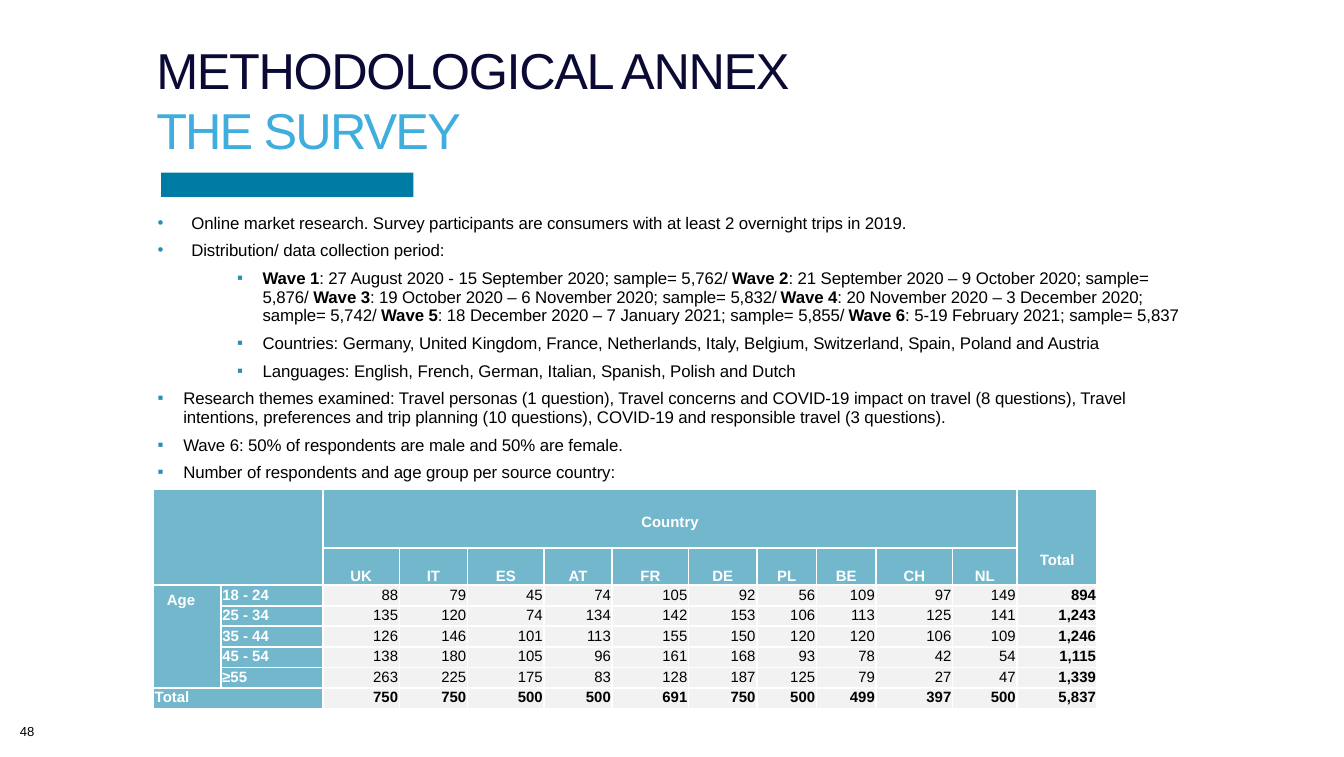
"""Builds the methodological annex slide describing the survey."""
import dataclasses

import lxml.etree
import pptx
import pptx.dml.color
import pptx.enum.shapes
import pptx.enum.text
import pptx.oxml.ns
import pptx.util

Pt = pptx.util.Pt
qn = pptx.oxml.ns.qn
Align = pptx.enum.text.PP_ALIGN
Anchor = pptx.enum.text.MSO_ANCHOR


@dataclasses.dataclass(frozen=True)
class Theme:
    font: str = "Arial"
    navy: str = "0A0A35"
    sky: str = "3FADDD"
    bar: str = "007BA3"
    bullet: str = "2D8CB5"
    header: str = "73B7CC"
    body: str = "F2F2F2"
    black: str = "000000"
    white: str = "FFFFFF"
    title_size: float = 27
    text_size: float = 9
    table_size: float = 8
    number_size: float = 7


theme = Theme()


def rgb(value):
    return pptx.dml.color.RGBColor.from_string(value)


def add_run(paragraph, text, size, color, bold=False, spacing=0):
    run = paragraph.add_run()
    run.text = text
    run.font.name = theme.font
    run.font.size = Pt(size)
    run.font.bold = bold
    run.font.color.rgb = rgb(color)
    if spacing:
        run.font._element.set("spc", str(spacing))


deck = pptx.Presentation()
deck.slide_width, deck.slide_height = Pt(720), Pt(405.5)
slide = deck.slides.add_slide(deck.slide_layouts[5])

title = slide.shapes.title
title.left, title.top, title.width, title.height = Pt(82.8), Pt(20.4), Pt(427.7), Pt(65.5)
heading = title.text_frame
heading.auto_size = pptx.enum.text.MSO_AUTO_SIZE.NONE
heading.vertical_anchor = Anchor.MIDDLE
heading.margin_left = heading.margin_right = heading.margin_bottom = 0
heading.margin_top = Pt(0.7)
title_lines = [("METHODOLOGICAL ANNEX", theme.navy, -75), ("THE SURVEY", theme.sky, -100)]
for index, (text, color, spacing) in enumerate(title_lines):
    line = heading.add_paragraph() if index else heading.paragraphs[0]
    line.alignment = Align.LEFT
    line.line_spacing = Pt(31.8)
    line.space_before = Pt(0)
    line._p.get_or_add_pPr().set("marL", str(Pt(0.9)))
    add_run(line, text, theme.title_size, color, spacing=spacing)

accent_bar = slide.shapes.add_shape(
    pptx.enum.shapes.MSO_SHAPE.RECTANGLE, Pt(86.3), Pt(92.5), Pt(135.2), Pt(13))
accent_bar.shadow.inherit = False
accent_bar.fill.solid()
accent_bar.fill.fore_color.rgb = rgb(theme.bar)
accent_bar.line.fill.background()

column_widths = [36.2, 54.6, 41, 36.5, 41, 36.5, 41, 36.5, 32, 32, 41, 34.5, 43]
row_heights = [31.2, 20] + [11] * 6
respondents = [
    ["", "", "Country"] + [""] * 9 + ["Total"],
    ["", "", "UK", "IT", "ES", "AT", "FR", "DE", "PL", "BE", "CH", "NL", ""],
    ["Age", "18 - 24", 88, 79, 45, 74, 105, 92, 56, 109, 97, 149, 894],
    ["", "25 - 34", 135, 120, 74, 134, 142, 153, 106, 113, 125, 141, 1243],
    ["", "35 - 44", 126, 146, 101, 113, 155, 150, 120, 120, 106, 109, 1246],
    ["", "45 - 54", 138, 180, 105, 96, 161, 168, 93, 78, 42, 54, 1115],
    ["", "≥55", 263, 225, 175, 83, 128, 187, 125, 79, 27, 47, 1339],
    ["Total", "", 750, 750, 500, 500, 691, 750, 500, 499, 397, 500, 5837],
]
last_row, last_column = len(row_heights) - 1, len(column_widths) - 1
table = slide.shapes.add_table(
    len(row_heights), len(column_widths),
    Pt(82.2), Pt(262.3), Pt(sum(column_widths)), Pt(sum(row_heights))).table
for column, width in zip(table.columns, column_widths):
    column.width = Pt(width)
for row, height in zip(table.rows, row_heights):
    row.height = Pt(height)

for r, entries in enumerate(respondents):
    for c, entry in enumerate(entries):
        cell = table.cell(r, c)
        is_head, is_label = r < 2, c < 2
        cell.margin_left = cell.margin_right = cell.margin_top = Pt(0.7)
        cell.margin_bottom = 0
        cell.vertical_anchor = Anchor.BOTTOM if is_head else Anchor.TOP
        if entry in ("Country", "Total") and is_head:
            cell.margin_bottom = Pt(9)
        if entry == "Age":
            cell.margin_left, cell.margin_top = Pt(7.2), Pt(3.6)
        cell.fill.solid()
        cell.fill.fore_color.rgb = rgb(theme.header if is_head or is_label else theme.body)
        for position, side in enumerate(("a:lnL", "a:lnR", "a:lnT", "a:lnB")):
            border = lxml.etree.Element(qn(side), w=str(Pt(1)))
            paint = lxml.etree.SubElement(border, qn("a:solidFill"))
            lxml.etree.SubElement(paint, qn("a:srgbClr"), val=theme.white)
            cell._tc.tcPr.insert(position, border)
        paragraph = cell.text_frame.paragraphs[0]
        if entry == "":
            paragraph._p.get_or_add_endParaRPr().set("sz", str(theme.table_size * 100))
            continue
        paragraph.alignment = Align.CENTER if is_head else Align.LEFT if is_label else Align.RIGHT
        add_run(paragraph, entry if isinstance(entry, str) else f"{entry:,}", theme.table_size,
                theme.white if is_head or is_label else theme.black,
                bold=is_head or is_label or r == last_row or c == last_column)

merges = [(0, 0, 1, 1), (0, 2, 0, last_column - 1), (0, last_column, 1, last_column),
          (2, 0, last_row - 1, 0), (last_row, 0, last_row, 1)]
for top, left, bottom, right in merges:
    table.cell(top, left).merge(table.cell(bottom, right))

page_number = slide.shapes.add_textbox(Pt(6.2), Pt(376.6), Pt(16.6), Pt(16.6)).text_frame
survey_notes = slide.shapes.add_textbox(Pt(83.8), Pt(112.3), Pt(553), Pt(141.8)).text_frame
for frame in (page_number, survey_notes):
    frame.word_wrap = True
    frame.margin_left = frame.margin_right = frame.margin_bottom = 0
    frame.margin_top = Pt(2.2)

page_line = page_number.paragraphs[0]
page_line.alignment = Align.CENTER
page_line.line_spacing = Pt(17)
add_run(page_line, "48", theme.number_size, theme.black)

waves = [
    ("Wave 1", ": 27 August 2020 - 15 September 2020; sample= 5,762/ "),
    ("Wave 2", ": 21 September 2020 – 9 October 2020; sample= 5,876/ "),
    ("Wave 3", ": 19 October 2020 – 6 November 2020; sample= 5,832/ "),
    ("Wave 4", ": 20 November 2020 – 3 December 2020; sample= 5,742/ "),
    ("Wave 5", ": 18 December 2020 – 7 January 2021; sample= 5,855/ "),
    ("Wave 6", ": 5-19 February 2021; sample= 5,837"),
]
main_point = (0, "•", 18.7, -18)
sub_point = (1, "▪", 56.9, -13.7)
theme_point = (0, "▪", 14.4, -13.7)
notes = [
    (main_point, [("", "Online market research. Survey participants are consumers with at least "
                       "2 overnight trips in 2019.")]),
    (main_point, [("", "Distribution/ data collection period:")]),
    (sub_point, waves),
    (sub_point, [("", "Countries: Germany, United Kingdom, France, Netherlands, Italy, Belgium, "
                      "Switzerland, Spain, Poland and Austria")]),
    (sub_point, [("", "Languages: English, French, German, Italian, Spanish, Polish and Dutch")]),
    (theme_point, [("", "Research themes examined: Travel personas (1 question), Travel concerns "
                        "and COVID-19 impact on travel (8 questions), Travel intentions, "
                        "preferences and trip planning (10 questions), COVID-19 and responsible "
                        "travel (3 questions).")]),
    (theme_point, [("", "Wave 6: 50% of respondents are male and 50% are female.")]),
    (theme_point, [("", "Number of respondents and age group per source country:")]),
]
for index, ((level, mark, margin, indent), segments) in enumerate(notes):
    note = survey_notes.add_paragraph() if index else survey_notes.paragraphs[0]
    note.level = level
    note.line_spacing = Pt(10)
    note.space_before = Pt(2.4 if index else 0)
    note.space_after = Pt(2.4)
    properties = note._p.get_or_add_pPr()
    properties.set("marL", str(Pt(margin)))
    properties.set("indent", str(Pt(indent)))
    mark_color = lxml.etree.SubElement(properties, qn("a:buClr"))
    lxml.etree.SubElement(mark_color, qn("a:srgbClr"), val=theme.bullet)
    lxml.etree.SubElement(properties, qn("a:buFont"), typeface=theme.font)
    lxml.etree.SubElement(properties, qn("a:buChar"), char=mark)
    for strong, plain in segments:
        if strong:
            add_run(note, strong, theme.text_size, theme.black, bold=True, spacing=-5)
        add_run(note, plain, theme.text_size, theme.black, spacing=-5)

deck.save("out.pptx")
